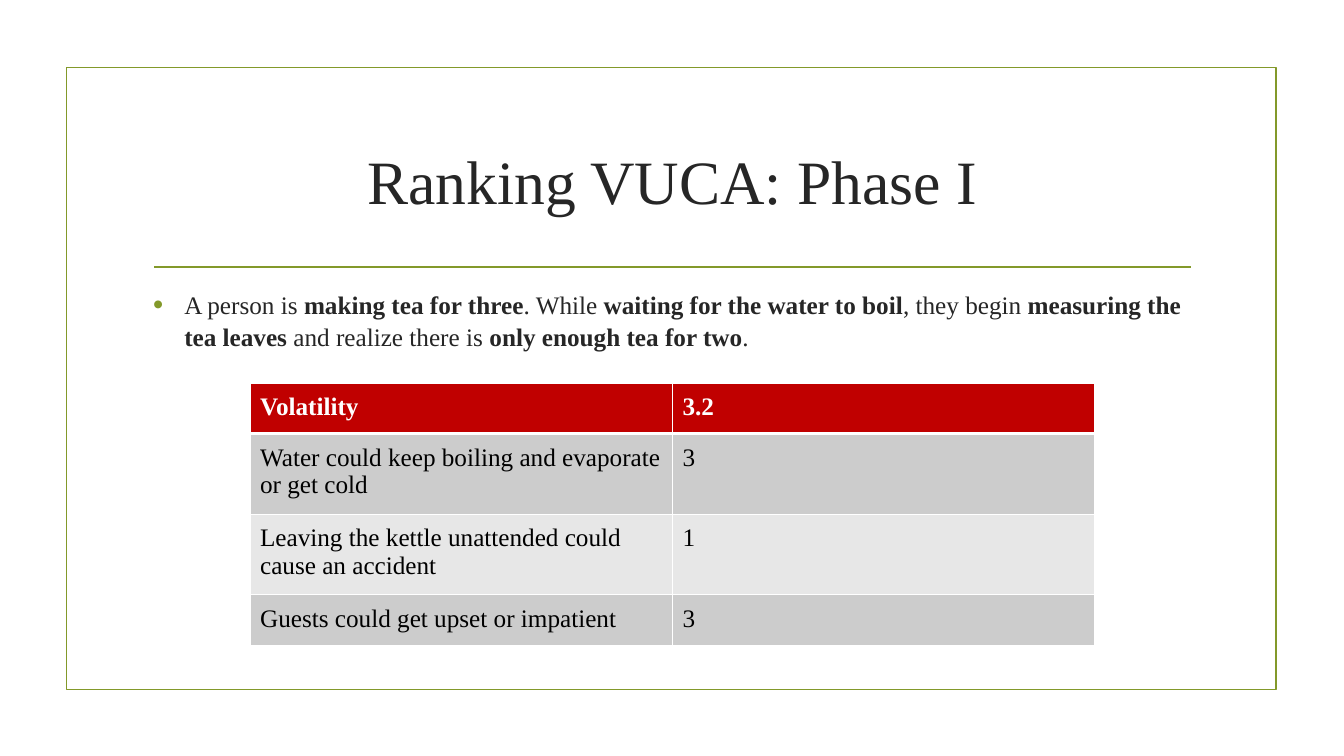
from dataclasses import dataclass

import pptx
import pptx.dml.color
import pptx.enum.shapes
import pptx.enum.text
import pptx.oxml
import pptx.oxml.ns
import pptx.slide
import pptx.table
import pptx.text.text
import pptx.util
from lxml import etree
from pptx.dml.color import RGBColor
from pptx.util import Inches

FONT = "Times New Roman"
OLIVE = RGBColor(0x83, 0x99, 0x2A)
INK = RGBColor(0x26, 0x26, 0x26)
BLACK = RGBColor(0, 0, 0)
WHITE = RGBColor(0xFF, 0xFF, 0xFF)
RED = RGBColor(0xC0, 0, 0)
GREY = RGBColor(0xCC, 0xCC, 0xCC)
PALE = RGBColor(0xE7, 0xE7, 0xE7)


@dataclass
class Row:
    factor: str
    score: str
    height: float
    fill: RGBColor
    header: bool = False


ROWS = [
    Row("Volatility", "3.2", 0.48, RED, header=True),
    Row("Water could keep boiling and evaporate or get cold", "3", 0.76, GREY),
    Row("Leaving the kettle unattended could cause an accident", "1", 0.76, PALE),
    Row("Guests could get upset or impatient", "3", 0.48, GREY),
]

SCENARIO = [
    ("A person is ", False),
    ("making tea for three", True),
    (". While ", False),
    ("waiting for the water to boil", True),
    (", they begin ", False),
    ("measuring the tea leaves", True),
    (" and realize there is ", False),
    ("only enough tea for two", True),
    (".", False),
]


def add_run(p: pptx.text.text._Paragraph, text: str, *, size: float = 18,
            color: RGBColor = INK, bold: bool = False) -> None:
    r = p.add_run()
    r.text = text
    r.font.name = FONT
    r.font.size = pptx.util.Pt(size)
    r.font.color.rgb = color
    r.font.bold = bold


def add_box(s: pptx.slide.Slide, left: float, top: float, width: float,
            height: float) -> pptx.text.text.TextFrame:
    tf = s.shapes.add_textbox(Inches(left), Inches(top), Inches(width), Inches(height)).text_frame
    tf.word_wrap = True
    return tf


def add_bullet(p: pptx.text.text._Paragraph) -> None:
    pPr = p._p.get_or_add_pPr()
    pPr.set("marL", str(Inches(0.31)))
    pPr.set("indent", str(Inches(-0.31)))
    color = etree.SubElement(pPr, pptx.oxml.ns.qn("a:buClr"))
    etree.SubElement(color, pptx.oxml.ns.qn("a:srgbClr"), val=str(OLIVE))
    etree.SubElement(pPr, pptx.oxml.ns.qn("a:buSzPct"), val="115000")
    etree.SubElement(pPr, pptx.oxml.ns.qn("a:buFont"), typeface="Arial")
    etree.SubElement(pPr, pptx.oxml.ns.qn("a:buChar"), char="•")


def set_borders(cell: pptx.table._Cell, top: float, bottom: float) -> None:
    tcPr = cell._tc.get_or_add_tcPr()
    sides = {"L": 1, "R": 1, "T": top, "B": bottom}
    for i, (side, width) in enumerate(sides.items()):
        ln = etree.Element(pptx.oxml.ns.qn(f"a:ln{side}"), w=str(pptx.util.Pt(width)))
        fill = etree.SubElement(ln, pptx.oxml.ns.qn("a:solidFill"))
        etree.SubElement(fill, pptx.oxml.ns.qn("a:srgbClr"), val=str(WHITE))
        tcPr.insert(i, ln)


def add_frame(s: pptx.slide.Slide) -> None:
    sp = s.shapes.add_shape(pptx.enum.shapes.MSO_SHAPE.RECTANGLE,
                            Inches(0.66), Inches(0.67), Inches(12), Inches(6.17))
    sp.shadow.inherit = False
    sp.fill.background()
    sp.line.color.rgb = OLIVE
    sp.line.width = pptx.util.Pt(1.25)
    rule = s.shapes.add_connector(pptx.enum.shapes.MSO_CONNECTOR.STRAIGHT,
                                  Inches(1.53), Inches(2.65), Inches(11.81), Inches(2.65))
    rule.line.color.rgb = OLIVE
    rule.line.width = pptx.util.Pt(1.25)
    etree.SubElement(rule._element.spPr, pptx.oxml.ns.qn("a:effectLst"))


def add_ranking(s: pptx.slide.Slide) -> None:
    height = sum(row.height for row in ROWS)
    table = s.shapes.add_table(len(ROWS), 2, Inches(2.48), Inches(3.8),
                               Inches(8.38), Inches(height)).table
    for i, row in enumerate(ROWS):
        table.rows[i].height = Inches(row.height)
        for j, text in enumerate((row.factor, row.score)):
            cell = table.cell(i, j)
            cell.margin_left = cell.margin_right = Inches(0.1)
            cell.margin_top = cell.margin_bottom = Inches(0.1)
            cell.fill.solid()
            cell.fill.fore_color.rgb = row.fill
            set_borders(cell, top=3 if i == 1 else 1, bottom=3 if row.header else 1)
            add_run(cell.text_frame.paragraphs[0], text,
                    color=WHITE if row.header else BLACK, bold=row.header)


def main() -> None:
    prs = pptx.Presentation()
    prs.slide_width, prs.slide_height = Inches(13.33), Inches(7.5)
    s = prs.slides.add_slide(prs.slide_layouts[6])
    add_frame(s)

    tf = add_box(s, 1.42, 1.07, 10.5, 1.43)
    tf.vertical_anchor = pptx.enum.text.MSO_ANCHOR.MIDDLE
    p = tf.paragraphs[0]
    p.alignment = pptx.enum.text.PP_ALIGN.CENTER
    add_run(p, "Ranking VUCA: Phase I", size=44)

    p = add_box(s, 1.42, 2.8, 10.5, 0.64).paragraphs[0]
    add_bullet(p)
    p.line_spacing = 1.07
    p.space_after = pptx.util.Pt(6)
    for text, bold in SCENARIO:
        add_run(p, text, bold=bold)

    add_ranking(s)
    prs.save("out.pptx")


if __name__ == "__main__":
    main()
